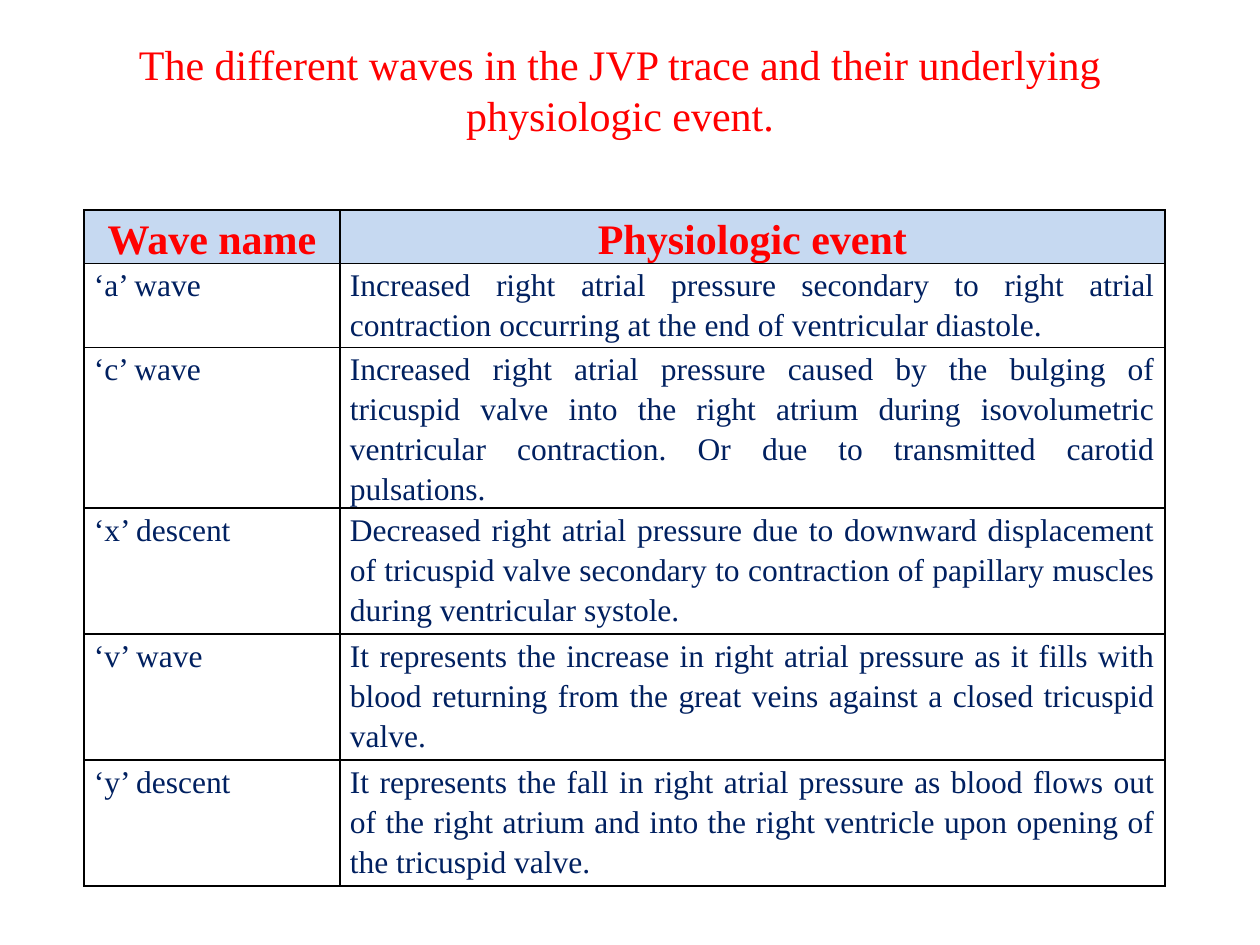
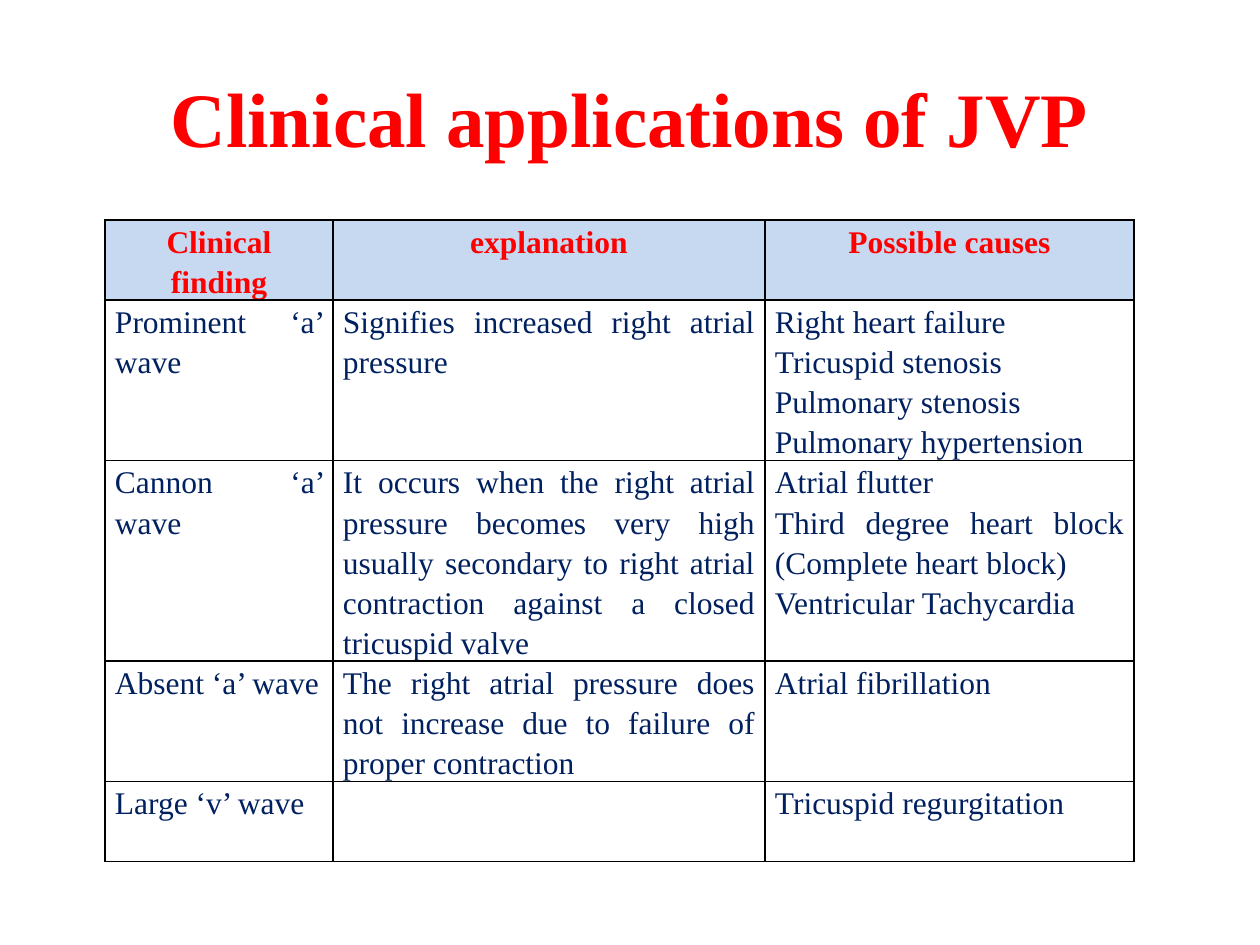
"""Build two slides of tables about the jugular venous pulse."""
from lxml import etree
from pptx import Presentation
from pptx import util as u
from pptx.dml.color import RGBColor
from pptx.enum import text
from pptx.oxml.ns import qn

SCALE = 914400 / 126
FONT = "Times New Roman"
COLORS = {"heading": "FF0000", "body": "002060", "header": "C6D9F1", "border": "000000"}
CENTER, JUSTIFY = text.PP_ALIGN.CENTER, text.PP_ALIGN.JUSTIFY


def px(n):
    return u.Emu(round(n * SCALE))


def write(tf, content, size=18, color="body", bold=False, align=JUSTIFY, spacing=None):
    for i, line in enumerate(content.split("\n")):
        p = tf.add_paragraph() if i else tf.paragraphs[0]
        p.alignment = align
        if spacing:
            p.line_spacing = spacing
        r = p.add_run()
        r.text = line
        r.font.name = FONT
        r.font.size = u.Pt(size)
        r.font.bold = bold
        r.font.color.rgb = RGBColor.from_string(COLORS[color])


class Deck:
    def __init__(self):
        self.prs = Presentation()
        self.prs.slide_width, self.prs.slide_height = px(1260), px(945)
        self.s = None

    def slide(self, title, x, y, size, bold=False):
        self.s = self.prs.slides.add_slide(self.prs.slide_layouts[5])
        sp = self.s.shapes.title
        sp.left, sp.top, sp.width, sp.height = px(x), px(y), px(1134), px(158)
        tf = sp.text_frame
        tf.word_wrap = True
        tf.auto_size = text.MSO_AUTO_SIZE.NONE
        tf.vertical_anchor = text.MSO_ANCHOR.MIDDLE
        write(tf, title, size, "heading", bold, CENTER)

    def border(self, cell):
        tcPr = cell._tc.get_or_add_tcPr()
        for i, side in enumerate(("lnL", "lnR", "lnT", "lnB")):
            ln = etree.Element(qn(f"a:{side}"), w=str(u.Pt(1)))
            fill = etree.SubElement(ln, qn("a:solidFill"))
            etree.SubElement(fill, qn("a:srgbClr"), val=COLORS["border"])
            tcPr.insert(i, ln)

    def cell(self, cell, content, header, header_size):
        cell.margin_left = cell.margin_right = px(10)
        cell.margin_top = cell.margin_bottom = 0
        if header:
            cell.fill.solid()
            cell.fill.fore_color.rgb = RGBColor.from_string(COLORS["header"])
            style = dict(size=header_size, color="heading", bold=True, align=CENTER)
        else:
            cell.fill.background()
            style = {}
        self.border(cell)
        if content:
            write(cell.text_frame, content, spacing=1.15, **style)

    def table(self, x, y, widths, heights, rows, header_size=18):
        frame = self.s.shapes.add_table(len(rows), len(widths), px(x), px(y),
                                        px(sum(widths)), px(sum(heights)))
        tbl = frame.table
        tbl.first_row = tbl.horz_banding = False
        for col, width in zip(tbl.columns, widths):
            col.width = px(width)
        for i, (row, height) in enumerate(zip(rows, heights)):
            tbl.rows[i].height = px(height)
            for j, content in enumerate(row):
                self.cell(tbl.cell(i, j), content, i == 0, header_size)


WAVES = [
    ("Wave name", "Physiologic event"),
    ("‘a’ wave", "Increased right atrial pressure secondary to right atrial contraction "
                 "occurring at the end of ventricular diastole."),
    ("‘c’ wave", "Increased right atrial pressure caused by the bulging of tricuspid valve "
                 "into the right atrium during isovolumetric ventricular contraction. "
                 "Or due to transmitted carotid pulsations."),
    ("‘x’ descent", "Decreased right atrial pressure due to downward displacement of "
                    "tricuspid valve secondary to contraction of papillary muscles "
                    "during ventricular systole."),
    ("‘v’ wave", "It represents the increase in right atrial pressure as it fills with "
                 "blood returning from the great veins against a closed tricuspid valve."),
    ("‘y’ descent", "It represents the fall in right atrial pressure as blood flows out of "
                    "the right atrium and into the right ventricle upon opening of the "
                    "tricuspid valve."),
]

FINDINGS = [
    ("Clinical finding", "explanation", "Possible causes"),
    ("Prominent ‘a’ wave", "Signifies increased right atrial pressure",
     "Right heart failure\nTricuspid stenosis\nPulmonary stenosis\nPulmonary hypertension"),
    ("Cannon ‘a’ wave",
     "It occurs when the right atrial pressure becomes very high usually secondary to "
     "right atrial contraction against a closed tricuspid valve",
     "Atrial flutter\nThird degree heart block (Complete heart block)\n"
     "Ventricular Tachycardia"),
    ("Absent ‘a’ wave",
     "The right atrial pressure does not increase due to failure of proper contraction",
     "Atrial fibrillation"),
    ("Large ‘v’ wave", "", "Tricuspid regurgitation"),
]


def main():
    deck = Deck()
    deck.slide("The different waves in the JVP trace and their underlying physiologic event.",
               53, 10, 24)
    deck.table(84, 210, (256, 825), (53, 84, 160, 126, 126, 126), WAVES, 24)
    deck.slide("Clinical applications of JVP", 63, 38, 44, bold=True)
    deck.table(105, 220, (228, 432, 369), (80, 160, 200, 120, 80), FINDINGS)
    deck.prs.save("out.pptx")


if __name__ == "__main__":
    main()
